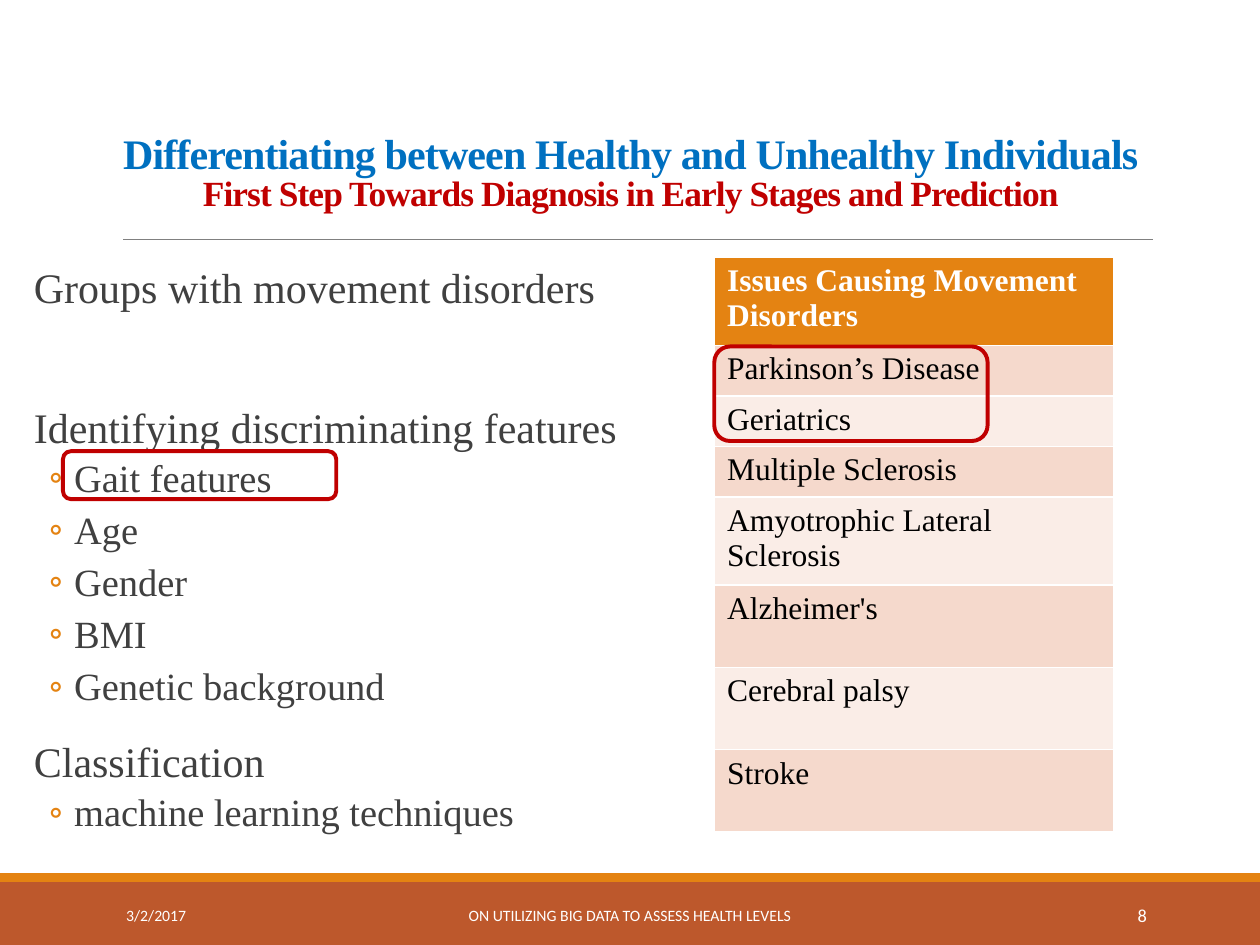
from lxml.etree import SubElement
from pptx import Presentation
from pptx.dml.color import RGBColor
from pptx.enum.shapes import MSO_CONNECTOR, MSO_SHAPE
from pptx.enum.text import MSO_ANCHOR, MSO_AUTO_SIZE, PP_ALIGN
from pptx.oxml.ns import qn
from pptx.util import Pt

WHITE = RGBColor(0xFF, 0xFF, 0xFF)
BLACK = RGBColor(0, 0, 0)
DARK = RGBColor(0x40, 0x40, 0x40)
GRAY = RGBColor(0x80, 0x80, 0x80)
BLUE = RGBColor(0x00, 0x70, 0xC0)
RED = RGBColor(0xC0, 0, 0)
RUST = RGBColor(0xBD, 0x58, 0x2C)
ORANGE = RGBColor(0xE4, 0x83, 0x12)
PEACH = RGBColor(0xF5, 0xD9, 0xCC)
CREAM = RGBColor(0xFA, 0xED, 0xE7)

TOPICS = [
    ("Groups with movement disorders", 0, []),
    ("Identifying discriminating features", 52,
     ["Gait features", "Age", "Gender", "BMI", "Genetic background"]),
    ("Classification", 14.4, ["machine learning techniques"]),
]
ISSUES = [
    ("Issues Causing Movement Disorders", 46.6),
    ("Parkinson’s Disease", 27.1),
    ("Geriatrics", 27.1),
    ("Multiple Sclerosis", 27.1),
    ("Amyotrophic Lateral Sclerosis", 47),
    ("Alzheimer's", 47),
    ("Cerebral palsy", 47),
    ("Stroke", 47),
]


class Deck:
    """Holds the style and the current slide, and draws each kind of element."""

    serif = "Times New Roman"
    sans = "Calibri"

    def __init__(self):
        self.file = Presentation()
        self.file.slide_width, self.file.slide_height = Pt(720), Pt(540)
        self.slide = self.file.slides.add_slide(self.file.slide_layouts[5])
        self.shapes = self.slide.shapes

    def style(self, para, face, size, color, bold=False):
        for run in para.runs:
            font = run.font
            font.name, font.size, font.bold = face, Pt(size), bold
            font.color.rgb = color

    def title(self, box, lines):
        shape = self.shapes.title
        shape.left, shape.top, shape.width, shape.height = map(Pt, box)
        frame = shape.text_frame
        frame.text = "\n".join(text for text, size, color in lines)
        frame.auto_size = MSO_AUTO_SIZE.NONE
        frame.vertical_anchor = MSO_ANCHOR.BOTTOM
        for para, (text, size, color) in zip(frame.paragraphs, lines):
            para.alignment = PP_ALIGN.CENTER
            para.line_spacing = 0.85
            para.space_before = Pt(0)
            self.style(para, self.serif, size, color, True)
            for run in para.runs:
                run.font._element.set("spc", "-50")

    def bar(self, top, height, color):
        shape = self.shapes.add_shape(
            MSO_SHAPE.RECTANGLE, 0, Pt(top), self.file.slide_width, Pt(height))
        shape.shadow.inherit = False
        shape.fill.solid()
        shape.fill.fore_color.rgb = color
        shape.line.fill.background()

    def rule(self, left, right, top):
        line = self.shapes.add_connector(
            MSO_CONNECTOR.STRAIGHT, Pt(left), Pt(top), Pt(right), Pt(top))
        line.line.color.rgb = GRAY
        line.line.width = Pt(0.5)
        SubElement(line._element.spPr, qn("a:effectLst"))

    def frame(self, box):
        shape = self.shapes.add_shape(MSO_SHAPE.ROUNDED_RECTANGLE, *map(Pt, box))
        shape.shadow.inherit = False
        shape.fill.background()
        shape.line.color.rgb = RED
        shape.line.width = Pt(2.25)

    def label(self, box, text, size, align):
        frame = self.shapes.add_textbox(*map(Pt, box)).text_frame
        frame.word_wrap = True
        frame.vertical_anchor = MSO_ANCHOR.MIDDLE
        frame.text = text
        para = frame.paragraphs[0]
        para.alignment = align
        self.style(para, self.sans, size, WHITE)

    def bullet(self, para):
        props = para._p.get_or_add_pPr()
        props.set("marL", str(Pt(30.24)))
        props.set("indent", str(-Pt(14.4)))
        tint = SubElement(props, qn("a:buClr"))
        SubElement(tint, qn("a:srgbClr")).set("val", str(ORANGE))
        SubElement(props, qn("a:buFont")).set("typeface", self.sans)
        SubElement(props, qn("a:buChar")).set("char", "◦")

    def outline(self, box, topics):
        frame = self.shapes.add_textbox(*map(Pt, box)).text_frame
        frame.word_wrap = True
        frame.margin_left = frame.margin_right = 0
        items = []
        for head, gap, points in topics:
            items.append((head, gap, False))
            items += [(point, 2, True) for point in points]
        frame.text = "\n".join(text for text, gap, sub in items)
        for para, (text, gap, sub) in zip(frame.paragraphs, items):
            para.line_spacing = 0.9
            para.space_before = Pt(gap)
            para.space_after = Pt(4 if sub else 2)
            if sub:
                para.level = 1
                self.bullet(para)
            else:
                para._p.get_or_add_pPr().set("marL", str(Pt(7.2)))
            self.style(para, self.serif, 22 if sub else 24, DARK)

    def table(self, left, top, width, rows):
        high = sum(height for text, height in rows)
        grid = self.shapes.add_table(
            len(rows), 1, Pt(left), Pt(top), Pt(width), Pt(high)).table
        for at, (text, height) in enumerate(rows):
            grid.rows[at].height = Pt(height)
            cell = grid.cell(at, 0)
            cell.text = text
            cell.fill.solid()
            head = at == 0
            cell.fill.fore_color.rgb = ORANGE if head else (CREAM, PEACH)[at % 2]
            self.style(cell.text_frame.paragraphs[0], self.serif, 18,
                       WHITE if head else BLACK, head)


def main():
    deck = Deck()
    deck.bar(504, 36, RUST)
    deck.bar(499, 5, ORANGE)
    deck.rule(70.5, 659, 136.8)
    deck.title((23, 48.2, 674.6, 77.8), [
        ("Differentiating between Healthy and Unhealthy Individuals", 24, BLUE),
        ("First Step Towards Diagnosis in Early Stages and Prediction", 20.2, RED),
    ])
    deck.outline((12.2, 149, 380, 337), TOPICS)
    deck.table(408.3, 147, 228, ISSUES)
    deck.frame((408.2, 198, 156.2, 54))
    deck.frame((36, 257.8, 156.2, 27.4))
    deck.label((65, 508.5, 146, 29), "3/2/2017", 9, PP_ALIGN.LEFT)
    deck.label((217.4, 508.5, 285, 29),
               "ON UTILIZING BIG DATA TO ASSESS HEALTH LEVELS", 9, PP_ALIGN.CENTER)
    deck.label((584.6, 508.5, 77.8, 29), "8", 10.5, PP_ALIGN.RIGHT)
    deck.file.save("out.pptx")


if __name__ == "__main__":
    main()
